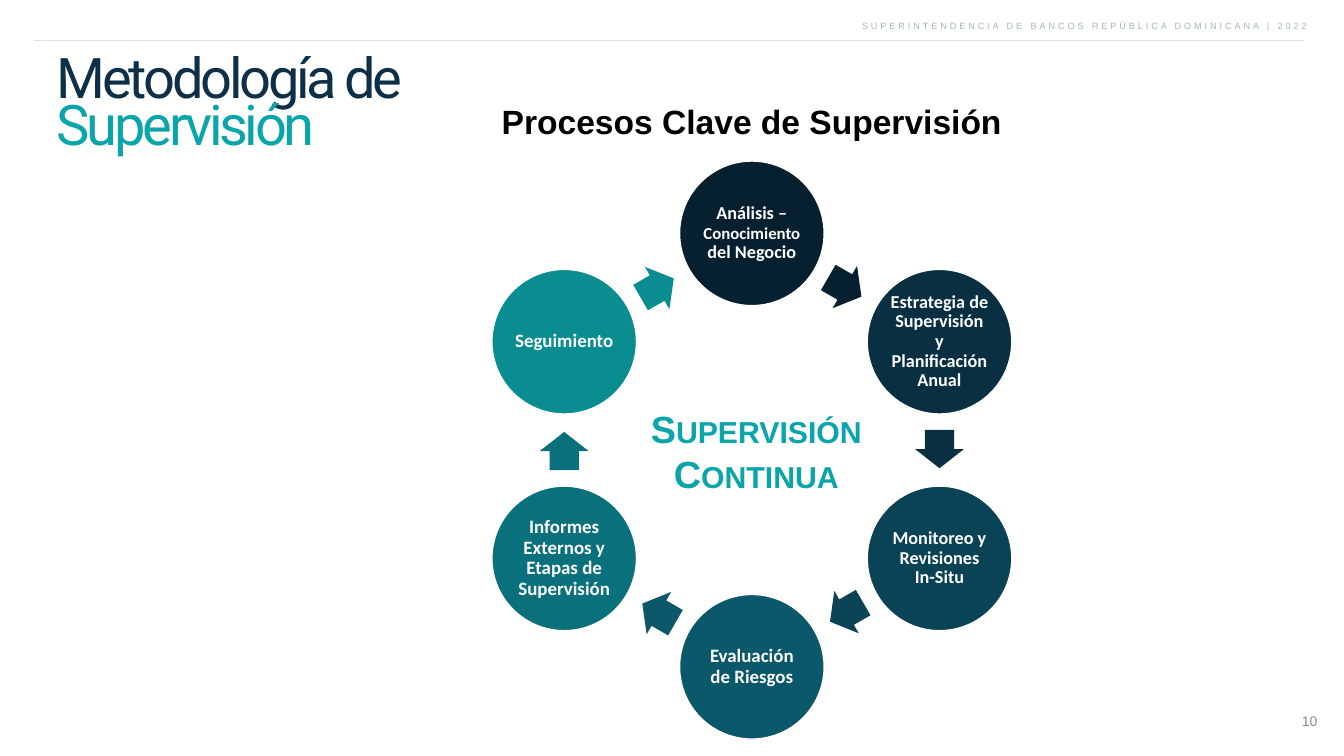
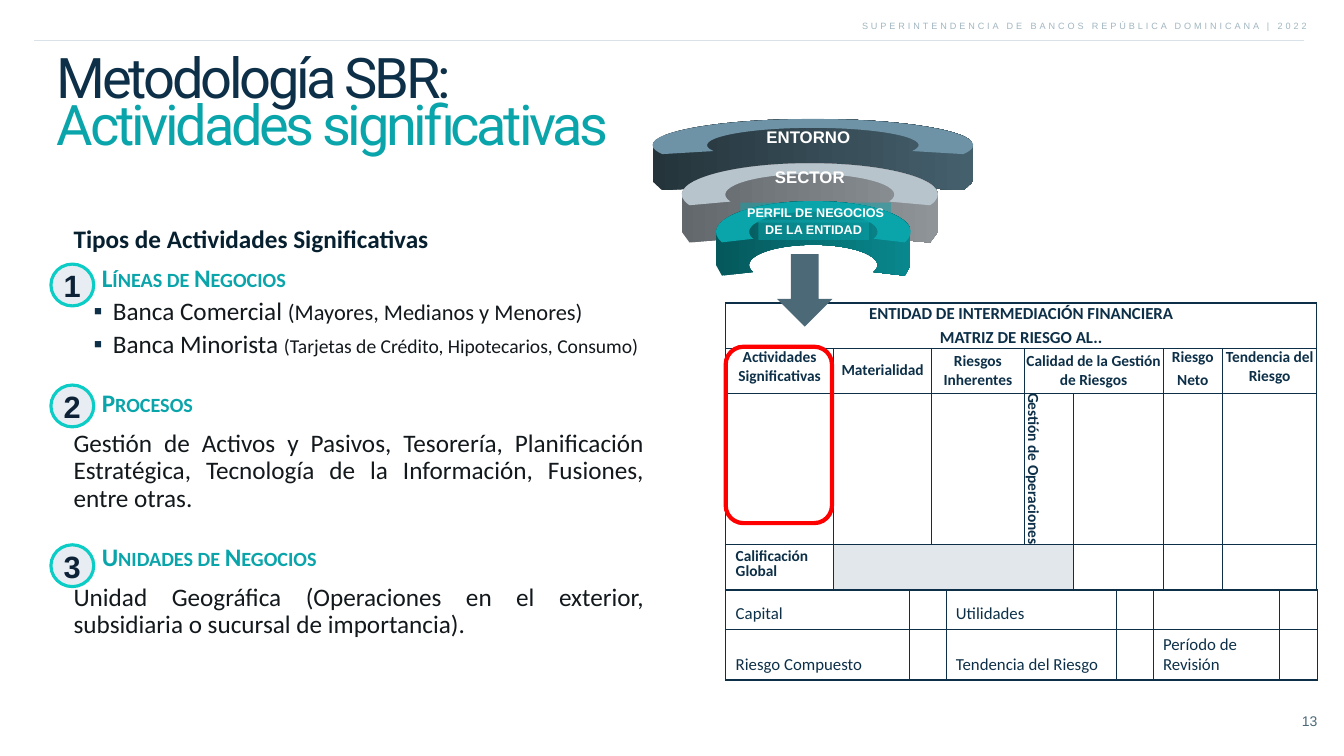
from math import cos, radians, sin, tan

from lxml import etree
from pptx import Presentation
from pptx.dml.color import RGBColor
from pptx.enum import shapes, text
from pptx.oxml import ns
from pptx.util import Inches, Pt

NAVY, TEAL, INK, WHITE = "0D3048", "0AA5AB", "12181C", "FFFFFF"
DEEP, SLATE, RULE, MUTED = "072030", "4C6978", "D8E2E8", "A1B6C1"
LEFT, CENTER = text.PP_ALIGN.LEFT, text.PP_ALIGN.CENTER
RIGHT, JUSTIFY = text.PP_ALIGN.RIGHT, text.PP_ALIGN.JUSTIFY
TOP, MIDDLE = text.MSO_ANCHOR.TOP, text.MSO_ANCHOR.MIDDLE
BOTTOM = text.MSO_ANCHOR.BOTTOM
KIND = shapes.MSO_SHAPE


# ---- helpers ----
def rgb(value):
    return RGBColor.from_string(value)


def child(parent, tag, **attrs):
    return etree.SubElement(parent, ns.qn(tag), attrs)


def write(tf, content, font="Calibri", size=24, color=NAVY, bold=False,
          small=False, spc=0, align=LEFT, line=None, before=0, indent=(0, 0),
          bullet=None):
    """Append one paragraph; content is a string or a list of (text, size)."""
    first = not tf.paragraphs[0].runs
    p = tf.paragraphs[0] if first else tf.add_paragraph()
    pPr = p._p.get_or_add_pPr()
    if any(indent):
        pPr.set("marL", str(Inches(indent[0])))
        pPr.set("indent", str(Inches(indent[1])))
    if bullet:
        child(child(pPr, "a:buClr"), "a:srgbClr", val=NAVY)
        if bullet == "1.":
            child(pPr, "a:buAutoNum", type="arabicPeriod")
        else:
            child(pPr, "a:buFont", typeface="Arial")
            child(pPr, "a:buChar", char=bullet)
    p.alignment = align
    if line:
        p.line_spacing = line
    if before and not first:
        p.space_before = Pt(before)
    for words, points in [(content, size)] if isinstance(content, str) else content:
        r = p.add_run()
        r.text = words
        r.font.name, r.font.size, r.font.bold = font, Pt(points), bold
        r.font.color.rgb = rgb(color)
        if small:
            r._r.get_or_add_rPr().set("cap", "small")
        if spc:
            r._r.get_or_add_rPr().set("spc", str(round(spc * 100)))


def frame(holder, inset=(0.1, 0.05), anchor=TOP, wrap=True, grow=False):
    tf = holder.text_frame
    tf.word_wrap, tf.vertical_anchor = wrap, anchor
    tf.margin_left = tf.margin_right = Inches(inset[0])
    tf.margin_top = tf.margin_bottom = Inches(inset[1])
    if grow:
        tf.auto_size = text.MSO_AUTO_SIZE.SHAPE_TO_FIT_TEXT
    return tf


def textbox(slide, x, y, w, h, **kw):
    box = slide.shapes.add_textbox(Inches(x), Inches(y), Inches(w), Inches(h))
    return frame(box, **kw)


def paint(sp, fill=None, line=None, width=1.0, alpha=None):
    sp.shadow.inherit = False
    if fill:
        sp.fill.solid()
        sp.fill.fore_color.rgb = rgb(fill)
        if alpha:
            clr = sp._element.spPr.find(".//" + ns.qn("a:srgbClr"))
            child(clr, "a:alpha", val=str(alpha * 1000))
    else:
        sp.fill.background()
    if line:
        sp.line.color.rgb = rgb(line)
        sp.line.width = Pt(width)
    else:
        sp.line.fill.background()
    return sp


def shape(slide, kind, x, y, w, h, **kw):
    sp = slide.shapes.add_shape(kind, Inches(x), Inches(y), Inches(w), Inches(h))
    return paint(sp, **kw)


def outline(slide, start, segments, fill):
    """Closed outline; a segment is one point (line) or three (curve)."""
    points = [(Inches(x), Inches(y)) for seg in segments for x, y in seg]
    builder = slide.shapes.build_freeform(Inches(start[0]), Inches(start[1]))
    builder.add_line_segments(points, close=True)
    sp = builder.convert_to_shape()
    lines = iter(sp._element.findall(".//" + ns.qn("a:lnTo")))
    for seg in segments:
        head, *rest = [next(lines) for _ in seg]
        if rest:
            head.tag = ns.qn("a:cubicBezTo")
            for ln in rest:
                head.append(ln[0])
                ln.getparent().remove(ln)
    return paint(sp, fill)


# ---- shared page parts ----
def new_page(prs, title, title_width, number, number_color):
    slide = prs.slides.add_slide(prs.slide_layouts[6])
    # header band
    tf = textbox(slide, 16.84, 0.3, 9.19, 0.64, inset=(0.1, 0.1), wrap=False, grow=True)
    write(tf, "SUPERINTENDENCIA DE BANCOS REPÚBLICA DOMINICANA | 2022",
          font="Arial", size=13, color=MUTED, spc=4.2, align=RIGHT)
    rule = slide.shapes.add_connector(shapes.MSO_CONNECTOR.STRAIGHT, Inches(0.68),
                                      Inches(0.8), Inches(25.88), Inches(0.8))
    rule.line.color.rgb = rgb(RULE)
    rule.line.width = Pt(0.75)
    child(rule._element.spPr, "a:effectLst")
    # two-colour title
    tf = textbox(slide, 1.03, 1.1, title_width, 2.11, inset=(0.1, 0.1), grow=True)
    for words, color in zip(title, (NAVY, TEAL)):
        write(tf, words, font="Roboto", size=80, color=color, spc=-4.7, line=0.7)
    # page number
    tf = textbox(slide, 25.5, 14.03, 0.74, 0.52, inset=(0.1, 0.1))
    write(tf, number, font="Arial", size=20, color=number_color, align=RIGHT)
    return slide


# ---- slide 1: supervision cycle ----
STEPS = [
    ([("Análisis – ", 26), ("Conocimiento", 24), (" del Negocio", 26)], DEEP),
    ([("Estrategia de Supervisión y Planificación Anual", 26)], "083042"),
    ([("Monitoreo y Revisiones In-Situ", 26)], "094355"),
    ([("Evaluación de Riesgos", 27)], "0A5869"),
    ([("Informes Externos y Etapas de Supervisión", 27)], "0A717C"),
    ([("Seguimiento", 27)], "098D91"),
]


def cycle(slide, cx, cy, radius, size=2.87, arrow_w=0.76, arrow_h=0.97):
    step = 360 / len(STEPS)
    arrow_radius = radius * cos(radians(step / 2))
    for i, (label, color) in enumerate(STEPS):
        turn = radians(i * step)
        x, y = cx + radius * sin(turn), cy - radius * cos(turn)
        sp = shape(slide, KIND.OVAL, x - size / 2, y - size / 2, size, size,
                   fill=color, line=WHITE, width=2)
        write(frame(sp, (0.04, 0.04), MIDDLE), label, color=WHITE, bold=True,
              align=CENTER, line=0.9)
        # arrow just before halfway to the next step
        turn = radians((i + 0.5) * step - 0.3)
        x, y = cx + arrow_radius * sin(turn), cy - arrow_radius * cos(turn)
        sp = shape(slide, KIND.RIGHT_ARROW, x - arrow_w / 2, y - arrow_h / 2,
                   arrow_w, arrow_h, fill=color)
        sp.adjustments[0] = 0.6
        sp.rotation = (i + 0.5) * step


def cycle_slide(prs):
    slide = new_page(prs, ("Metodología de", "Supervisión"), 9.28, "10", "8C8C8C")
    tf = textbox(slide, 12.66, 8, 4.7, 1.92, grow=True)
    write(tf, "Supervisión Continua", font="Arial", size=54, color=TEAL,
          bold=True, small=True, align=CENTER)
    tf = textbox(slide, 7.31, 1.52, 15.22, 1.33, anchor=BOTTOM)
    write(tf, "Procesos Clave de Supervisión", font="Arial", size=48,
          color="000000", bold=True, align=CENTER)
    cycle(slide, 14.92, 8.93, 4.3)


# ---- slide 2: significant activities ----
def activities(slide, x, y, w, h):
    tf = textbox(slide, x, y, w, h, inset=(0.05, 0.05))
    base = dict(size=36, align=JUSTIFY, line=0.9)
    heading = dict(base, color=TEAL, bold=True, small=True, indent=(0.56, -0.56),
                   bullet="1.")
    body = dict(base, color=INK, before=18)
    item = dict(base, color=INK, before=8, indent=(0.78, -0.38), bullet="▪")
    write(tf, "Tipos de Actividades Significativas", **dict(base, color=DEEP, bold=True))
    write(tf, "Líneas de Negocios", before=18, **heading)
    write(tf, [("Banca Comercial ", 36), ("(Mayores, Medianos y Menores)", 32)], **item)
    write(tf, [("Banca Minorista ", 36),
               ("(Tarjetas de Crédito, Hipotecarios, Consumo)", 28)], **item)
    write(tf, "Procesos", before=46, **heading)
    write(tf, "Gestión de Activos y Pasivos, Tesorería, Planificación Estratégica, "
              "Tecnología de la Información, Fusiones, entre otras.", **body)
    write(tf, "Unidades de Negocios", before=46, **heading)
    write(tf, "Unidad Geográfica (Operaciones en el exterior, subsidiaria o "
              "sucursal de importancia).", **body)


def badges(slide, x, tops):
    for number, y in enumerate(tops, 1):
        sp = shape(slide, KIND.OVAL, x, y, 0.85, 0.83,
                   fill="E7EDF2", line="0CCCC6", width=4.5)
        write(frame(sp, (0, 0), MIDDLE, wrap=False), str(number), font="Arial",
              size=44, color="0D2237", bold=True, align=CENTER)


def grid(slide, x, y, widths, heights):
    """Table with thin inner lines, a thick outline and no fill."""
    rows, cols = len(heights), len(widths)
    gf = slide.shapes.add_table(rows, cols, Inches(x), Inches(y),
                                Inches(sum(widths)), Inches(sum(heights)))
    table = gf.table
    table.first_row = table.horz_banding = False
    for col, w in zip(table.columns, widths):
        col.width = Inches(w)
    for row, h in zip(table.rows, heights):
        row.height = Inches(h)
    for r in range(rows):
        for c in range(cols):
            cell = table.cell(r, c)
            tcPr = cell._tc.get_or_add_tcPr()
            outer = {"L": c == 0, "R": c == cols - 1, "T": r == 0, "B": r == rows - 1}
            for side, thick in outer.items():
                ln = child(tcPr, "a:ln" + side, w=str(Pt(2.25 if thick else 1)))
                child(child(ln, "a:solidFill"), "a:srgbClr", val=NAVY)
            cell.fill.background()
    return table


def fill_cell(cell, lines, anchor=MIDDLE, inset=(0, 0), **fmt):
    cell.vertical_anchor = anchor
    cell.margin_left = cell.margin_right = Inches(inset[0])
    cell.margin_top = cell.margin_bottom = Inches(inset[1])
    for words in lines:
        write(cell.text_frame, words, before=5, **fmt)


def risk_matrix(slide, x, y):
    table = grid(slide, x, y, (2.14, 1.95, 1.83, 0.98, 1.78, 1.18, 1.87),
                 (0.9, 0.89, 2.6, 0.9))
    for start, end in (((0, 0), (0, 6)), ((1, 3), (1, 4)), ((3, 1), (3, 3))):
        table.cell(*start).merge(table.cell(*end))
    fill_cell(table.cell(0, 0), ["ENTIDAD DE INTERMEDIACIÓN FINANCIERA",
                                 "MATRIZ DE RIESGO AL.."], bold=True, align=CENTER)
    heads = {0: (["Actividades Significativas"], TOP), 1: (["Materialidad"], MIDDLE),
             2: (["Riesgos Inherentes"], MIDDLE),
             3: (["Calidad de la Gestión de Riesgos"], MIDDLE),
             5: (["Riesgo", "Neto"], TOP), 6: (["Tendencia del Riesgo"], TOP)}
    label = dict(size=22, bold=True)
    for c, (lines, anchor) in heads.items():
        fill_cell(table.cell(1, c), lines, anchor, align=CENTER, **label)
    operations = table.cell(2, 3)
    fill_cell(operations, ["Gestión de Operaciones"], align=CENTER, **label)
    operations._tc.tcPr.set("vert", "eaVert")
    fill_cell(table.cell(3, 0), ["Calificación Global"], TOP, (0.2, 0.1),
              line=0.8, **label)
    shaded = table.cell(3, 1).fill
    shaded.solid()
    shaded.fore_color.rgb = rgb("E1E7EB")
    # overall ratings below
    table = grid(slide, x, y + 5.7, (3.64, 0.73, 3.38, 0.73, 2.5, 0.77), (0.78, 1))
    for r, labels in enumerate((("Capital", "Utilidades"), (
            "Riesgo Compuesto", "Tendencia del Riesgo", "Período de Revisión"))):
        for i, words in enumerate(labels):
            fill_cell(table.cell(r, 2 * i), [words], BOTTOM, (0.2, 0.1))
    # highlight on the first column
    shape(slide, KIND.ROUNDED_RECTANGLE, x, y + 0.87, 2.11, 3.5, line="FF0000", width=6)


def ring(slide, cx, cy, rx, ry, depth, top, wall):
    """Open ring seen from the front, cut 20 degrees below its axis."""
    def at(angle, scale=1, drop=0, pull=0):
        a = radians(angle)
        return (cx + scale * rx * (cos(a) - pull * sin(a)),
                cy + drop - scale * ry * (sin(a) + pull * cos(a)))

    def arc(angles, scale=1, drop=0):
        curves = []
        for a, b in zip(angles, angles[1:]):
            k = 4 / 3 * tan(radians(b - a) / 4)
            curves.append([at(a, scale, drop, k), at(b, scale, drop, -k),
                           at(b, scale, drop)])
        return curves

    sweep, hole = (-20, 90, 200), 0.66
    # walls and cut ends in one outline, then the top face
    sides = ([[at(180, drop=depth)], [at(200, drop=depth)], [at(200, hole, depth)]]
             + arc(sweep[::-1], hole, depth)
             + [[at(-20, drop=depth)], [at(0, drop=depth)], [at(0)]]
             + arc((0, 90, 180)))
    sp = outline(slide, at(180), sides, wall[0])
    sp.fill.gradient()
    sp.fill.gradient_angle = 0
    for stop, color in zip(sp.fill.gradient_stops, wall):
        stop.color.rgb = rgb(color)
    face = arc(sweep) + [[at(200, hole)]] + arc(sweep[::-1], hole)
    return outline(slide, at(-20), face, top)


def context_rings(slide, x, y):
    label = dict(font="Arial", color=WHITE, bold=True, align=CENTER)
    ring(slide, x + 3.18, y + 0.51, 3.18, 0.52, 0.72, "6F93A6", ("25343B", "45606D"))
    sector = ring(slide, x + 3.12, y + 1.49, 2.54, 0.62, 0.74, "B8C4CC",
                  ("63686D", "8F9499"))
    write(frame(sector, (0.1, 0.07), wrap=False), "SECTOR", size=24, **label)
    ring(slide, x + 3.19, y + 2.23, 1.93, 0.61, 0.66, TEAL, ("05585B", "08888D"))
    tf = textbox(slide, x + 2.11, y + 0.09, 1.96, 0.5, grow=True)
    write(tf, "ENTORNO", size=24, **label)
    # arrow into the matrix, between the two profile labels
    shape(slide, KIND.DOWN_ARROW, x + 2.47, y + 2.67, 1.1, 1.44, fill=SLATE)
    for words, dx, dy, w in (("PERFIL DE NEGOCIOS", 1.74, 1.65, 2.99),
                             ("DE LA ENTIDAD", 2.1, 1.99, 2.19)):
        sp = shape(slide, KIND.RECTANGLE, x + dx, y + dy, w, 0.4, fill=TEAL, alpha=50)
        write(frame(sp, anchor=MIDDLE), words, size=18, **label)


def activities_slide(prs):
    slide = new_page(prs, ("Metodología SBR:", "Actividades significativas"), 11.67,
                     "13", SLATE)
    activities(slide, 1.41, 4.44, 11.42, 8.73)
    risk_matrix(slide, 14.4, 6.01)
    context_rings(slide, 12.95, 2.37)
    badges(slide, 1.01, (5.24, 7.64, 10.81))


def main():
    prs = Presentation()
    prs.slide_width, prs.slide_height = Inches(26.67), Inches(15)
    cycle_slide(prs)
    activities_slide(prs)
    prs.save("out.pptx")


if __name__ == "__main__":
    main()
